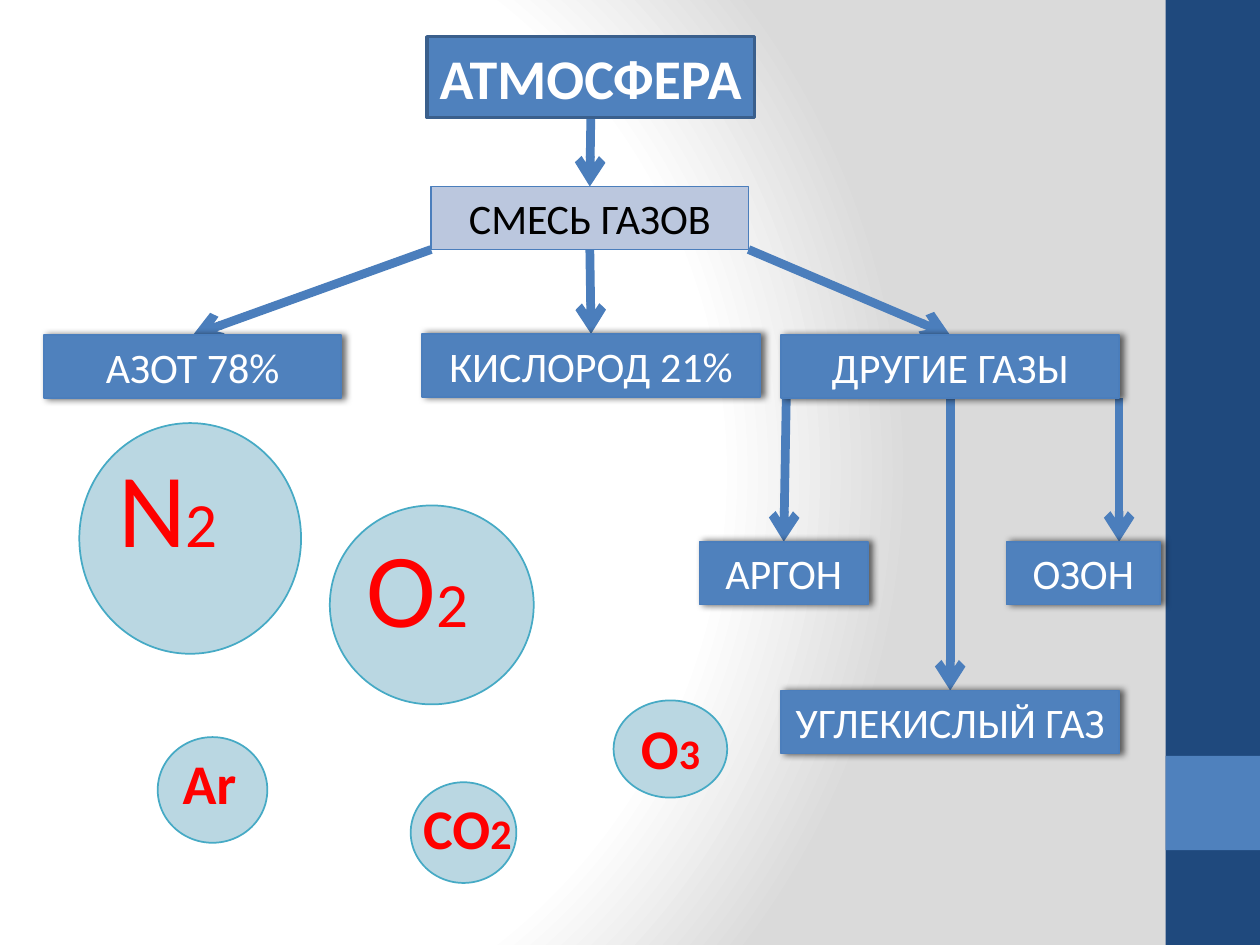
from lxml import etree
from pptx import Presentation
from pptx.dml.color import RGBColor
from pptx.enum.shapes import MSO_CONNECTOR as Line, MSO_SHAPE as Shape
from pptx.enum.text import MSO_ANCHOR as Anchor, PP_ALIGN as Align
from pptx.oxml import parse_xml
from pptx.oxml.ns import nsdecls, qn
from pptx.util import Cm, Pt

TOP, BOTTOM = 0, 2


def color(hex_text):
    return RGBColor.from_string(hex_text)


def add_span(para, text, size=24, ink="FFFFFF", bold=False, font="Calibri"):
    span = para.add_run()
    span.text = text
    span.font.name = font
    span.font.size = Pt(size)
    span.font.bold = bold
    span.font.color.rgb = color(ink)


class Diagram:
    navy, blue, pale = "1F497D", "4F81BD", "BBC7DE"
    edge, bubble, rim, formula = "4B7EBC", "BAD7E2", "46AAC5", "FF0000"

    def __init__(self, page):
        self.page = page

    def background(self, stops):
        self.page.background.fill.gradient()
        grad = self.page.background._cSld.find(".//" + qn("a:gradFill"))
        marks = "".join(
            f'<a:gs pos="{pos * 1000}"><a:srgbClr val="{tone}"/></a:gs>' for pos, tone in stops)
        grad.getparent().replace(grad, parse_xml(
            f'<a:gradFill {nsdecls("a")} rotWithShape="1"><a:gsLst>{marks}</a:gsLst>'
            '<a:path path="circle"><a:fillToRect l="20000" t="50000" r="100000" b="50000"/>'
            '</a:path></a:gradFill>'))

    def shape(self, kind, place, fill, line=None, width=1):
        shape = self.page.shapes.add_shape(kind, *map(Cm, place))
        shape.shadow.inherit = False
        shape.fill.solid()
        shape.fill.fore_color.rgb = color(fill)
        if line:
            shape.line.color.rgb = color(line)
            shape.line.width = Pt(width)
        else:
            shape.line.fill.background()
        return shape

    def box(self, text, place, fill=blue, line=edge, width=1, shadow=True, **style):
        box = self.shape(Shape.RECTANGLE, place, fill, line, width)
        if shadow:
            effects = box._element.spPr.find(qn("a:effectLst"))
            effects.append(parse_xml(
                f'<a:outerShdw {nsdecls("a")} blurRad="{Pt(4)}" dist="{Pt(2)}" dir="0" '
                'algn="ctr" rotWithShape="0"><a:srgbClr val="000000">'
                '<a:alpha val="60000"/></a:srgbClr></a:outerShdw>'))
        frame = box.text_frame
        frame.word_wrap = False
        frame.vertical_anchor = Anchor.MIDDLE
        frame.paragraphs[0].alignment = Align.CENTER
        add_span(frame.paragraphs[0], text, **style)
        return box

    def molecule(self, symbol, index, circle, label, sizes, bold):
        self.shape(Shape.OVAL, circle, self.bubble, self.rim)
        frame = self.page.shapes.add_textbox(*map(Cm, label)).text_frame
        frame.word_wrap = True
        for text, size in zip((symbol, index), sizes):
            if text:
                add_span(frame.paragraphs[0], text, size=size, ink=self.formula, bold=bold)

    def arrow(self, target, source=None, start=(0, 0), end=(0, 0)):
        """Join box sides where given, otherwise use the start and end points."""
        arrow = self.page.shapes.add_connector(Line.STRAIGHT, *map(Cm, (*start, *end)))
        if source is not None:
            arrow.begin_connect(source, BOTTOM)
        if target is not None:
            arrow.end_connect(target, TOP)
        arrow.line.color.rgb = color(self.edge)
        arrow.line.width = Pt(5)
        etree.SubElement(arrow.line._get_or_add_ln(), qn("a:tailEnd"), type="arrow")
        etree.SubElement(arrow._element.spPr, qn("a:effectLst"))
        # Arrows lie behind the boxes
        self.page.shapes._spTree.insert(2, arrow._element)


def main():
    deck = Presentation()
    deck.slide_width, deck.slide_height = Cm(25.4), Cm(19.05)
    diagram = Diagram(deck.slides.add_slide(deck.slide_layouts[6]))

    # Background and side strip
    diagram.background([(0, "FFFFFF"), (75, "FFFFFF"), (100, "DADADA")])
    diagram.shape(Shape.RECTANGLE, (23.5, 0, 1.9, 19.05), diagram.navy)
    diagram.shape(Shape.RECTANGLE, (23.5, 15.24, 1.9, 1.9), diagram.blue)

    # Boxes, level by level
    atmosphere = diagram.box("АТМОСФЕРА", (8.61, 0.74, 6.6, 1.63), line="3A5F8C", width=2,
                             shadow=False, size=32, bold=True)
    mixture = diagram.box("СМЕСЬ ГАЗОВ", (8.69, 3.76, 6.4, 1.27), fill=diagram.pale,
                          shadow=False, ink="000000")
    nitrogen = diagram.box("АЗОТ 78%", (0.89, 6.76, 5.99, 1.27))
    oxygen = diagram.box("КИСЛОРОД 21%", (8.51, 6.73, 6.81, 1.27))
    others = diagram.box("ДРУГИЕ ГАЗЫ", (15.75, 6.76, 6.81, 1.27))
    argon = diagram.box("АРГОН", (14.1, 10.92, 3.4, 1.27))
    diagram.box("ОЗОН", (20.29, 10.92, 3.1, 1.27))
    carbon_dioxide = diagram.box("УГЛЕКИСЛЫЙ ГАЗ", (15.75, 13.92, 6.81, 1.27))

    # Arrows
    for source, target in ((atmosphere, mixture), (mixture, oxygen), (others, carbon_dioxide)):
        diagram.arrow(target, source)
    for start, target in (((8.69, 5.03), nitrogen), ((15.09, 5.03), others),
                          ((15.85, 8.03), argon)):
        diagram.arrow(target, start=start)
    diagram.arrow(None, start=(22.56, 8.03), end=(22.56, 10.92))

    # Molecules: symbol, index, circle, label, sizes, bold
    large, small = (60, 36), (32, 24)
    for molecule in (
        ("N", "2", (1.6, 8.53, 4.47, 4.65), (2.13, 8.79, 4.72, 3.96), large, False),
        ("O", "2", (6.65, 10.19, 4.11, 4.01), (7.14, 10.41, 4.34, 3.43), large, False),
        ("CO", "2", (8.28, 15.77, 2.13, 2.03), (8.28, 15.88, 2.49, 1.98), small, True),
        ("Ar", "", (3.18, 14.86, 2.21, 2.13), (3.43, 14.96, 2.36, 1.63), small, True),
        ("O", "3", (12.37, 14.12, 2.29, 1.96), (12.67, 14.25, 2.41, 1.35), small, True),
    ):
        diagram.molecule(*molecule)

    deck.save("out.pptx")


if __name__ == "__main__":
    main()
